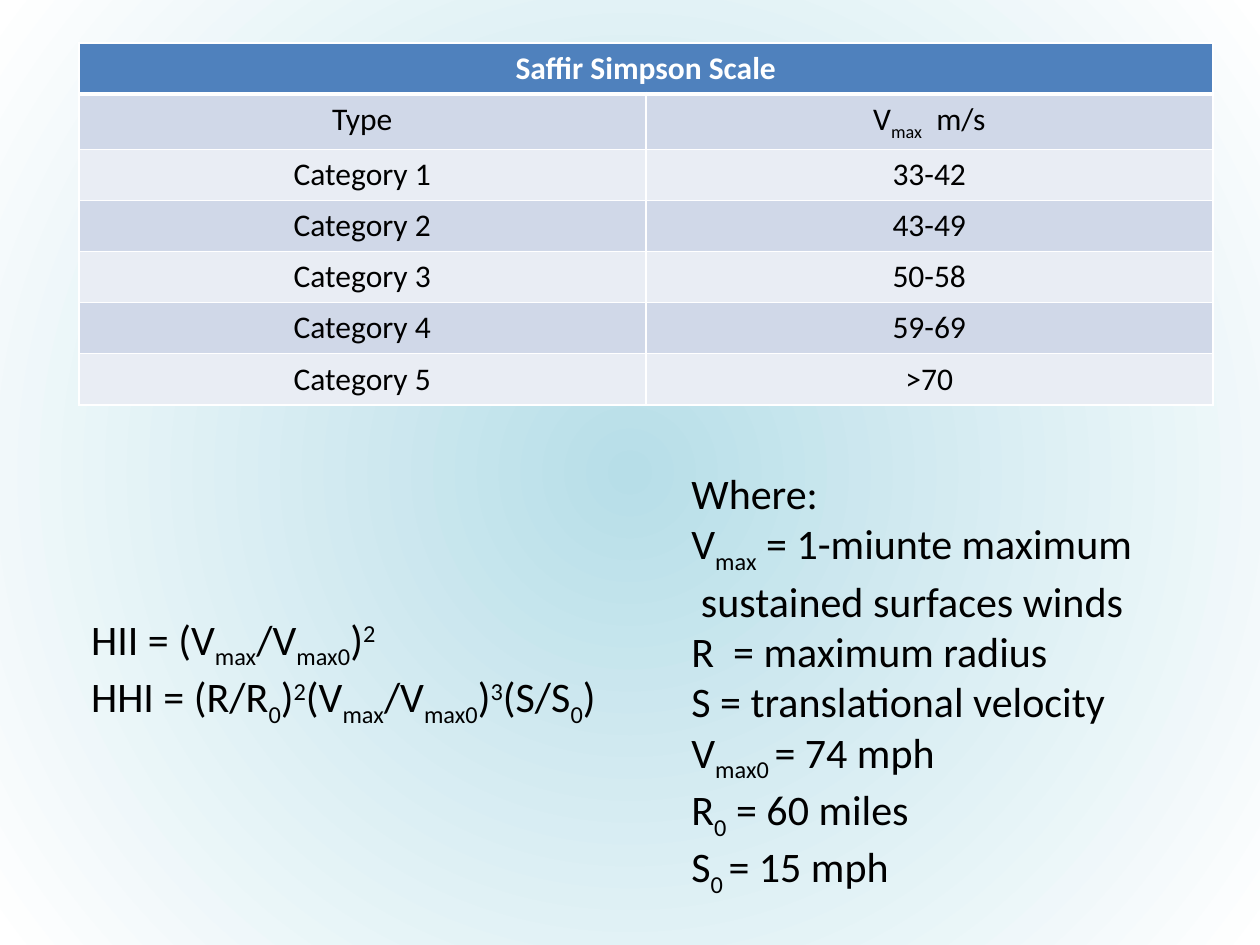
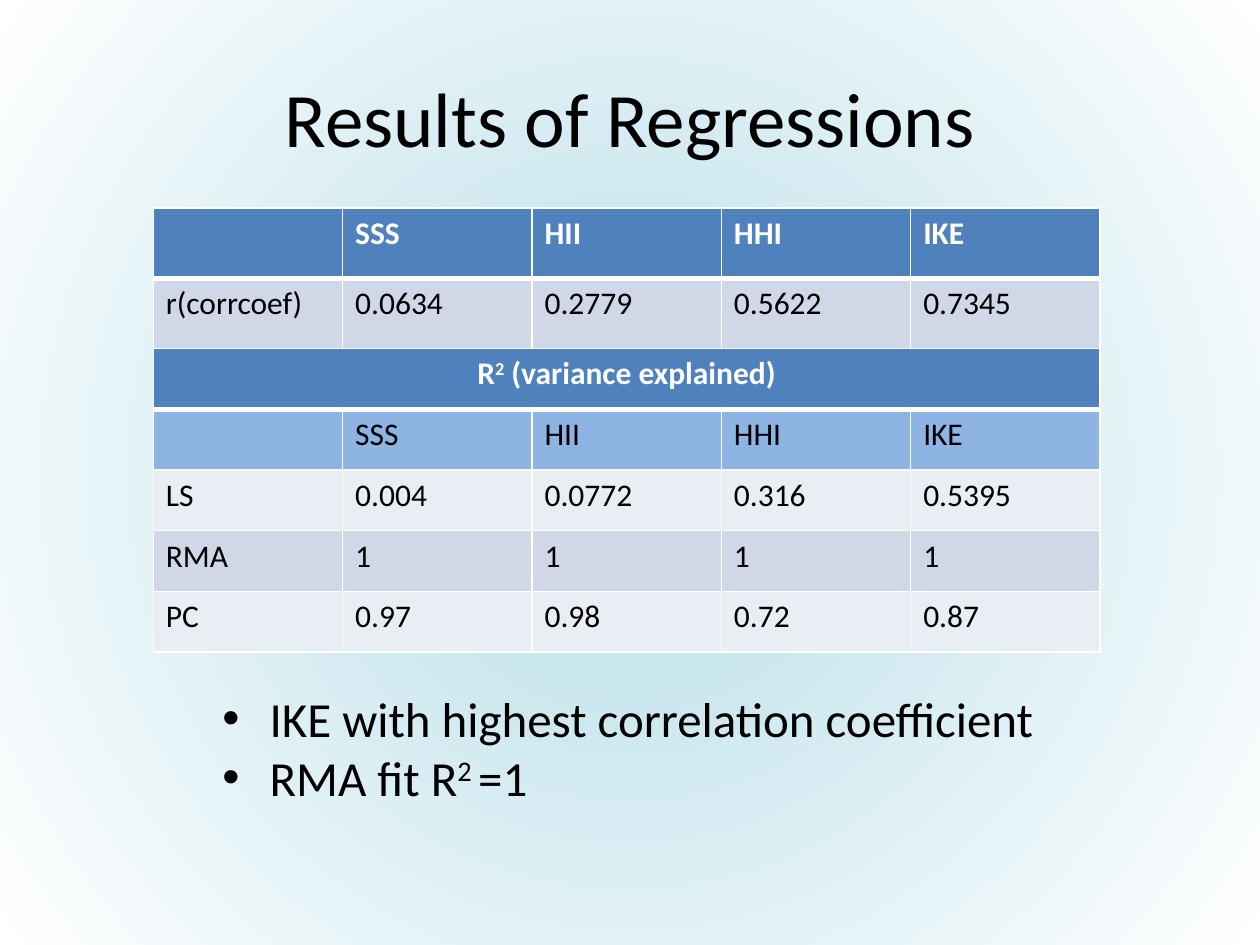
from lxml.etree import SubElement
from pptx import Presentation
from pptx.dml.color import RGBColor
from pptx.enum.text import MSO_ANCHOR, MSO_AUTO_SIZE, PP_ALIGN
from pptx.oxml import parse_xml
from pptx.oxml.ns import nsdecls, qn
from pptx.util import Pt

FONT = "Calibri"
BLACK = RGBColor(0x00, 0x00, 0x00)
WHITE = RGBColor(0xFF, 0xFF, 0xFF)
AQUA = RGBColor(0xB7, 0xDE, 0xE8)
HEADER = RGBColor(0x4F, 0x81, 0xBD)
SUBHEADER = RGBColor(0x8E, 0xB4, 0xE3)
DARK_BAND = RGBColor(0xD0, 0xD8, 0xE8)
LIGHT_BAND = RGBColor(0xE9, 0xED, 0xF4)

# "|" separates spans; a leading "_" lowers a span and "^" raises it.
BASELINES = {"_": "-25000", "^": "30000"}

SCALE = [
    ["Saffir Simpson Scale"],
    ["Type", "V|_max|  m/s"],
    ["Category 1", "33-42"],
    ["Category 2", "43-49"],
    ["Category 3", "50-58"],
    ["Category 4", "59-69"],
    ["Category 5", ">70"],
]
SCALE_FILLS = [HEADER] + [DARK_BAND, LIGHT_BAND] * 3

FORMULAS = [
    "HII = (V|_max|/V|_max0|)|^2",
    "HHI = (R/R|_0|)|^2|(V|_max|/V|_max0|)|^3|(S/S|_0|)",
]
DEFINITIONS = [
    "Where:",
    "V|_max| = 1-miunte maximum",
    " sustained surfaces winds",
    "R  = maximum radius",
    "S = translational velocity",
    "V|_max0 |= 74 mph",
    "R|_0| = 60 miles",
    "S|_0 |= 15 mph",
]

RESULTS_TITLE = "Results of Regressions"
INDICES = ["", "SSS", "HII", "HHI", "IKE"]
CORRELATION = [INDICES, ["r(corrcoef)", "0.0634", "0.2779", "0.5622", "0.7345"]]
CORRELATION_FILLS = [HEADER, DARK_BAND]
VARIANCE = [
    ["R|^2| (variance explained)"],
    INDICES,
    ["LS", "0.004", "0.0772", "0.316", "0.5395"],
    ["RMA", "1", "1", "1", "1"],
    ["PC", "0.97", "0.98", "0.72", "0.87"],
]
VARIANCE_FILLS = [HEADER, SUBHEADER, LIGHT_BAND, DARK_BAND, LIGHT_BAND]
FINDINGS = ["IKE with highest correlation coefficient", "RMA fit R|^2 |=1"]


def set_background(master):
    """Give every slide a round gradient, aqua in the middle and white outside."""
    fill = master.background.fill
    fill.gradient()
    for stop, color, position in zip(fill.gradient_stops, (AQUA, WHITE), (0, 1)):
        stop.color.rgb = color
        stop.position = position
    gradient = master.element.find(".//" + qn("a:gradFill"))
    gradient.replace(gradient.find(qn("a:lin")), parse_xml(
        f'<a:path {nsdecls("a")} path="circle">'
        '<a:fillToRect l="50000" t="50000" r="50000" b="50000"/></a:path>'))


def write(para, text, size, color=BLACK, bold=False, align=PP_ALIGN.LEFT):
    para.alignment = align
    font = para.font
    font.name, font.size, font.bold = FONT, Pt(size), bold
    font.color.rgb = color
    for piece in filter(None, text.split("|")):
        span = para.add_run()
        baseline = BASELINES.get(piece[0])
        span.text = piece[1:] if baseline else piece
        if baseline:
            span.font._element.set("baseline", baseline)


def add_bullet(para):
    props = para._p.get_or_add_pPr()
    props.set("marL", str(Pt(27)))
    props.set("indent", str(-Pt(27)))
    props.insert(0, parse_xml(f'<a:buFont {nsdecls("a")} typeface="Arial"/>'))
    props.insert(1, parse_xml(f'<a:buChar {nsdecls("a")} char="•"/>'))


def add_text(slide, left, top, width, height, lines, size, wrap=True, bullets=False):
    frame = slide.shapes.add_textbox(Pt(left), Pt(top), Pt(width), Pt(height)).text_frame
    frame.word_wrap = wrap
    frame.auto_size = MSO_AUTO_SIZE.SHAPE_TO_FIT_TEXT
    for index, line in enumerate(lines):
        para = frame.add_paragraph() if index else frame.paragraphs[0]
        write(para, line, size)
        if bullets:
            add_bullet(para)


def set_borders(cell, widths):
    """Draw white borders; widths maps side letters to points, in L, R, T, B order."""
    props = cell._tc.get_or_add_tcPr()
    for index, (side, width) in enumerate(widths.items()):
        line = parse_xml(f'<a:ln{side} {nsdecls("a")} w="{Pt(width)}"/>')
        SubElement(SubElement(line, qn("a:solidFill")), qn("a:srgbClr"), val=str(WHITE))
        props.insert(index, line)


def add_grid(slide, left, top, width, row_height, rows, fills, align=PP_ALIGN.LEFT):
    """Add a table of equal columns; a row with one text spans the whole width."""
    columns = max(map(len, rows))
    table = slide.shapes.add_table(len(rows), columns, Pt(left), Pt(top), Pt(width),
                                   Pt(row_height * len(rows))).table
    for row_index, (texts, fill) in enumerate(zip(rows, fills)):
        table.rows[row_index].height = Pt(row_height)
        is_header = fill == HEADER
        borders = {"L": 1, "R": 1, "B": 3 if is_header else 1}
        if row_index == 0:
            borders = {"L": 1, "R": 1, "T": 1, "B": borders["B"]}
        for column in range(columns):
            cell = table.cell(row_index, column)
            cell.fill.solid()
            cell.fill.fore_color.rgb = fill
            set_borders(cell, borders)
        if len(texts) == 1:
            table.cell(row_index, 0).merge(table.cell(row_index, columns - 1))
        for column, text in enumerate(texts):
            write(table.cell(row_index, column).text_frame.paragraphs[0], text, 18,
                  WHITE if is_header else BLACK, is_header,
                  PP_ALIGN.CENTER if len(texts) == 1 else align)


def add_scale_slide(deck):
    slide = deck.slides.add_slide(deck.slide_layouts[6])
    add_grid(slide, 45, 24.5, 648, 29.2, SCALE, SCALE_FILLS, PP_ALIGN.CENTER)
    add_text(slide, 45, 347, 324, 65.5, FORMULAS, 24)
    add_text(slide, 388, 263.5, 273, 262, DEFINITIONS, 24, wrap=False)


def add_results_slide(deck):
    slide = deck.slides.add_slide(deck.slide_layouts[5])
    title = slide.shapes.title
    title.left, title.top, title.width, title.height = Pt(36), Pt(21.6), Pt(648), Pt(90)
    title.text_frame.vertical_anchor = MSO_ANCHOR.MIDDLE
    write(title.text_frame.paragraphs[0], RESULTS_TITLE, 44, align=PP_ALIGN.CENTER)

    left, top, width, row_height = 87.6, 118.8, 541, 40.2
    add_grid(slide, left, top, width, row_height, CORRELATION, CORRELATION_FILLS)
    add_grid(slide, left, top + row_height * len(CORRELATION), width, 34.7,
             VARIANCE, VARIANCE_FILLS)
    add_text(slide, 120, 390, 480, 75, FINDINGS, 28, bullets=True)


def main():
    deck = Presentation()
    deck.slide_width, deck.slide_height = Pt(720), Pt(540)
    set_background(deck.slide_master)
    add_scale_slide(deck)
    add_results_slide(deck)
    deck.save("out.pptx")


if __name__ == "__main__":
    main()
